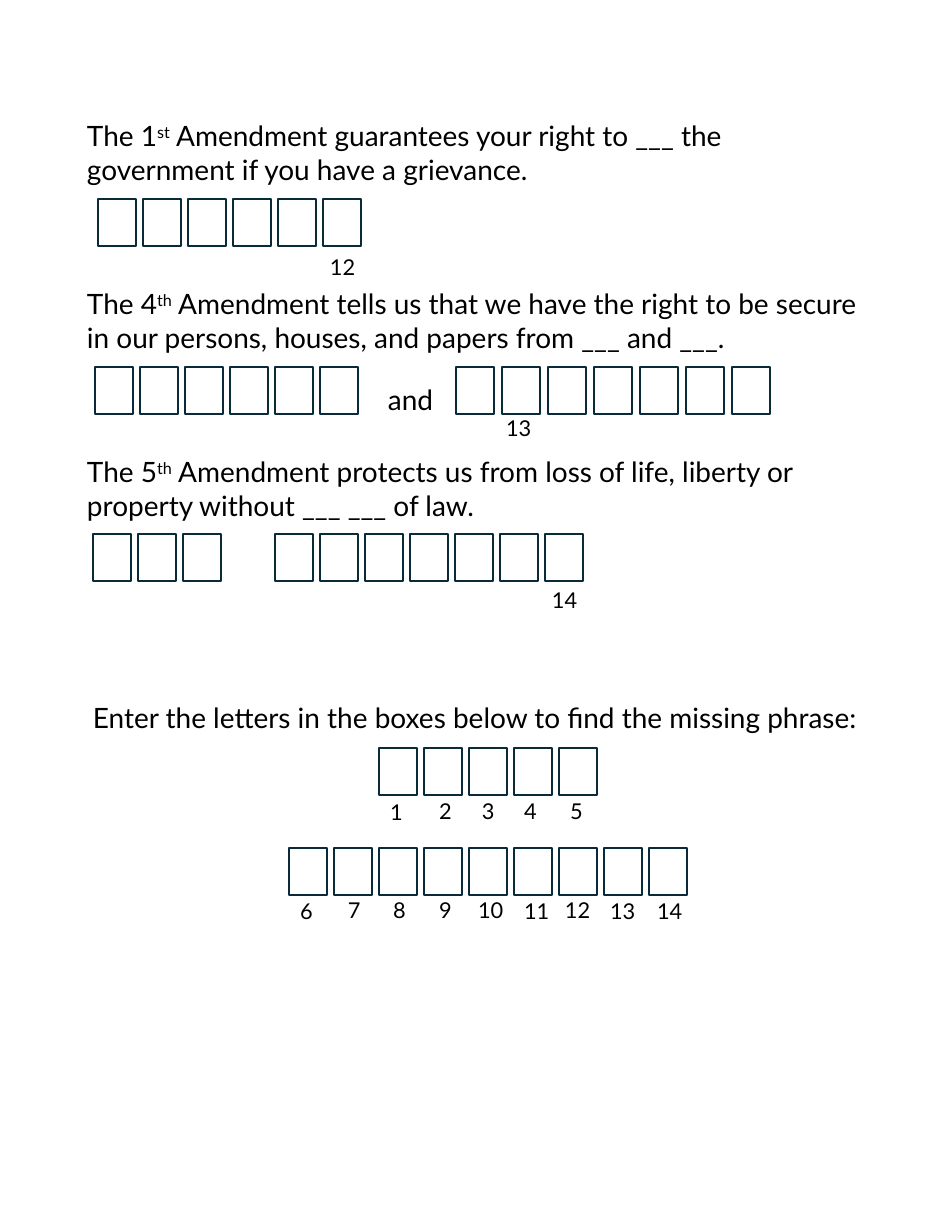
from dataclasses import dataclass

from pptx import Presentation
from pptx.dml.color import RGBColor
from pptx.enum.shapes import MSO_SHAPE as Shape
from pptx.enum.text import MSO_AUTO_SIZE as AutoSize
from pptx.util import Emu, Inches, Pt

PX = Inches(1) // 112
FONT = "Lato"
BLACK = "000000"
NAVY = "092A39"
BOX_W, BOX_H = 38, 47
LABEL_H = 38


@dataclass
class BoxRow:
    left: int
    top: int
    count: int
    pitch: int = 45


@dataclass
class Label:
    text: str
    left: int
    top: int
    width: int = 31


@dataclass
class Clue:
    article: str
    ordinal: str
    rest: str


CLUES = [
    Clue("The 1", "st", " Amendment guarantees your right to ___ the government "
         "if you have a grievance."),
    Clue("The 4", "th", " Amendment tells us that we have the right to be secure "
         "in our persons, houses, and papers from ___ and ___."),
    Clue("The 5", "th", " Amendment protects us from loss of life, liberty or "
         "property without ___ ___ of law."),
]

BOX_ROWS = [
    BoxRow(98, 199, 6),
    BoxRow(95, 367, 6),
    BoxRow(456, 367, 7, pitch=46),
    BoxRow(93, 534, 3),
    BoxRow(275, 534, 7),
    BoxRow(379, 748, 5),
    BoxRow(289, 848, 9),
]

LABELS = [
    Label("12", 319, 248, 56),
    Label("13", 495, 409, 57),
    Label("14", 541, 581, 56),
    Label("1", 379, 793),
    Label("2", 428, 792),
    Label("3", 471, 792),
    Label("4", 513, 792),
    Label("5", 559, 792),
    Label("6", 289, 892),
    Label("7", 337, 891),
    Label("8", 382, 891),
    Label("9", 428, 891),
    Label("10", 467, 891, 54),
    Label("11", 513, 892, 54),
    Label("12", 554, 891, 48),
    Label("13", 599, 892, 48),
    Label("14", 646, 892, 48),
]


def px(n: int) -> Emu:
    return Emu(n * PX)


def color(value: str) -> RGBColor:
    return RGBColor.from_string(value)


def style(p, size: int) -> None:
    p.font.name = FONT
    p.font.size = Pt(size)
    p.font.color.rgb = color(BLACK)


def add_text_frame(slide, left: int, top: int, width: int, height: int):
    tf = slide.shapes.add_textbox(px(left), px(top), px(width), px(height)).text_frame
    tf.word_wrap = True
    tf.auto_size = AutoSize.SHAPE_TO_FIT_TEXT
    return tf


def add_line(slide, text: str, size: int, left: int, top: int, width: int, height: int) -> None:
    """Add a text box holding one paragraph."""
    p = add_text_frame(slide, left, top, width, height).paragraphs[0]
    p.text = text
    style(p, size)


def add_clues(slide, clues: list[Clue]) -> None:
    """Add the clues in one text box, with room for a row of boxes after each."""
    tf = add_text_frame(slide, 76, 113, 799, 520)
    for i, clue in enumerate(clues):
        p = tf.add_paragraph() if i else tf.paragraphs[0]
        style(p, 18)
        if i:
            p.space_before = Pt(64.8)
        for text in (clue.article, clue.ordinal, clue.rest):
            r = p.add_run()
            r.text = text
            if text == clue.ordinal:
                r.font._element.set("baseline", "30000")


def add_box_row(slide, row: BoxRow) -> None:
    for i in range(row.count):
        s = slide.shapes.add_shape(
            Shape.RECTANGLE, px(row.left + i * row.pitch), px(row.top), px(BOX_W), px(BOX_H)
        )
        s.shadow.inherit = False
        s.fill.background()
        s.line.color.rgb = color(NAVY)
        s.line.width = Pt(1.5)


def main() -> None:
    prs = Presentation()
    prs.slide_width, prs.slide_height = Inches(8.5), Inches(11)
    slide = prs.slides.add_slide(prs.slide_layouts[6])

    add_clues(slide, CLUES)
    add_line(slide, "and", 18, 377, 377, 112, 45)
    add_line(slide, "Enter the letters in the boxes below to find the missing phrase:",
             18, 82, 695, 824, 147)
    for row in BOX_ROWS:
        add_box_row(slide, row)
    for label in LABELS:
        add_line(slide, label.text, 14, label.left, label.top, label.width, LABEL_H)

    prs.save("out.pptx")


if __name__ == "__main__":
    main()
